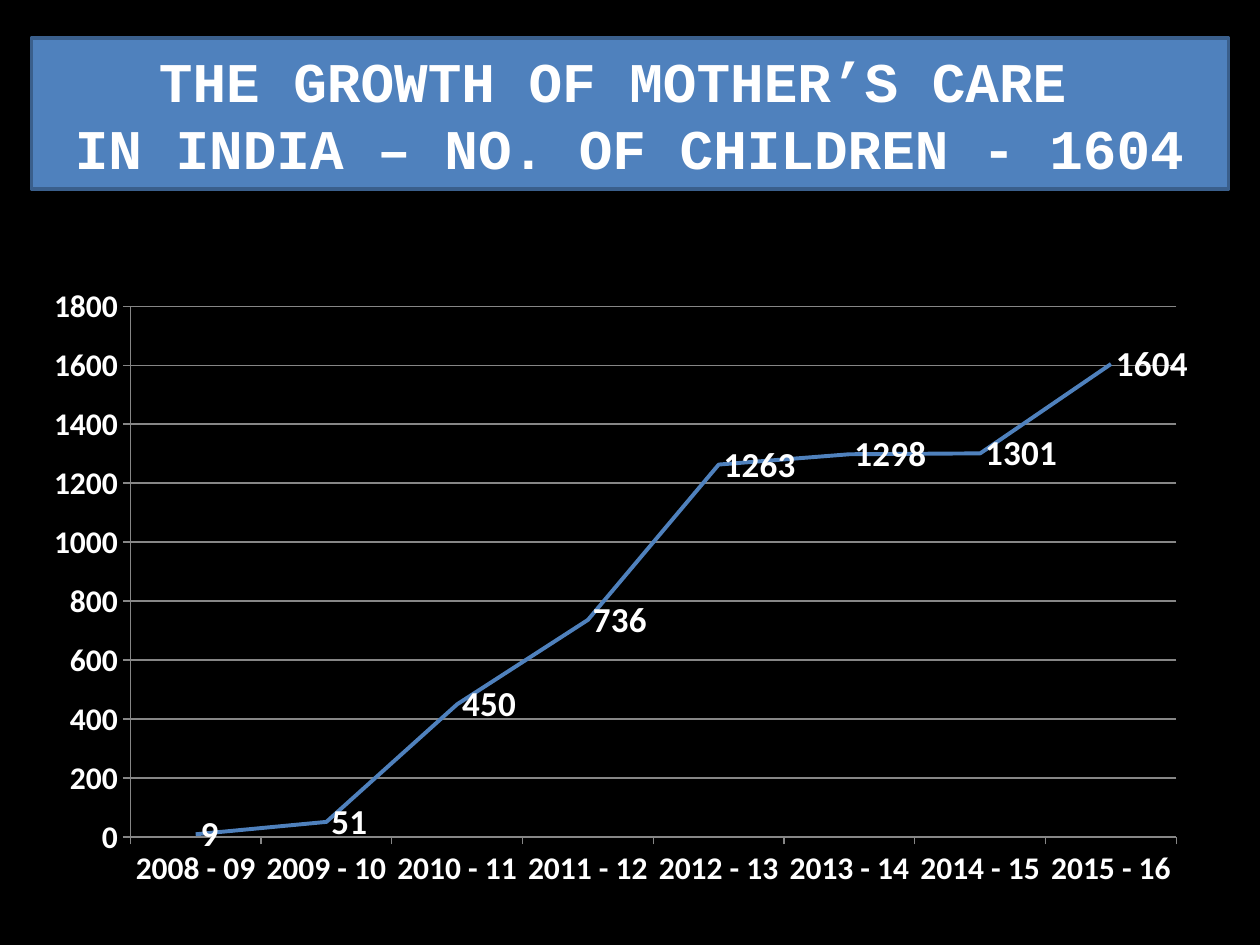
from lxml import etree
from pptx import Presentation
from pptx import util as u
from pptx.chart.data import CategoryChartData
from pptx.dml.color import RGBColor
from pptx.enum import chart as ch
from pptx.enum import text
from pptx.oxml import ns

BLACK, WHITE, BLUE, EDGE, GRID = "000000", "FFFFFF", "4F81BD", "3A5F8C", "868686"
CHILDREN = {
    "2008 - 09": 9, "2009 - 10": 51, "2010 - 11": 450, "2011 - 12": 736,
    "2012 - 13": 1263, "2013 - 14": 1298, "2014 - 15": 1301, "2015 - 16": 1604,
}


def color(value):
    return RGBColor.from_string(value)


def fill_solid(fill, value):
    fill.solid()
    fill.fore_color.rgb = color(value)


def set_line(line, value, width):
    fill_solid(line.fill, value)
    line.width = u.Pt(width)


def set_font(font, name, size, value):
    font.name, font.size, font.bold = name, u.Pt(size), True
    font.color.rgb = color(value)


def place_title(title, box):
    title.left, title.top, title.width, title.height = map(u.Inches, box)
    fill_solid(title.fill, BLUE)
    set_line(title.line, EDGE, 2)
    frame = title.text_frame
    frame.word_wrap = True
    frame.auto_size = text.MSO_AUTO_SIZE.NONE
    frame.vertical_anchor = text.MSO_ANCHOR.MIDDLE
    frame.text = "THE GROWTH OF MOTHER’S CARE \vIN INDIA – NO. OF CHILDREN - 1604"
    paragraph = frame.paragraphs[0]
    paragraph.alignment = text.PP_ALIGN.CENTER
    set_font(paragraph.font, "Courier New", 32, WHITE)


def set_plot_layout(chart, box):
    """Fix the inner plot area, given as fractions of the chart."""
    plot_area = chart.plots[0]._element.getparent()
    for old in plot_area.findall(ns.qn("c:layout")):
        plot_area.remove(old)
    layout = etree.Element(ns.qn("c:layout"))
    manual = etree.SubElement(layout, ns.qn("c:manualLayout"))
    settings = [("layoutTarget", "inner"), ("xMode", "edge"), ("yMode", "edge")]
    settings += zip("xywh", box)
    for tag, value in settings:
        etree.SubElement(manual, ns.qn(f"c:{tag}")).set("val", str(value))
    plot_area.insert(0, layout)


def style_axis(axis):
    axis.major_tick_mark = ch.XL_TICK_MARK.OUTSIDE
    axis.minor_tick_mark = ch.XL_TICK_MARK.NONE
    set_line(axis.format.line, GRID, 0.75)
    set_font(axis.tick_labels.font, "Calibri", 18, WHITE)


def add_growth_chart(slide, box):
    data = CategoryChartData()
    data.categories = list(CHILDREN)
    data.add_series("Series 1", list(CHILDREN.values()))
    chart = slide.shapes.add_chart(
        ch.XL_CHART_TYPE.LINE, *map(u.Inches, box), data).chart
    chart.has_legend = False
    chart.has_title = False
    chart.font.name, chart.font.size = "Calibri", u.Pt(18)
    set_plot_layout(chart, (0.084, 0.122, 0.89, 0.755))

    # Axes and gridlines
    style_axis(chart.category_axis)
    values = chart.value_axis
    style_axis(values)
    values.minimum_scale, values.maximum_scale, values.major_unit = 0, 1800, 200
    values.has_major_gridlines = True
    set_line(values.major_gridlines.format.line, GRID, 0.75)

    # Line and its value labels
    plot = chart.plots[0]
    plot.vary_by_categories = False
    series = plot.series[0]
    series.smooth = False
    series.marker.style = ch.XL_MARKER_STYLE.NONE
    set_line(series.format.line, BLUE, 2.25)
    labels = series.data_labels
    labels.show_value = True
    labels.position = ch.XL_LABEL_POSITION.RIGHT
    set_font(labels.font, "Calibri", 20, WHITE)


def main():
    presentation = Presentation()
    presentation.slide_width, presentation.slide_height = u.Inches(10), u.Inches(7.5)
    slide = presentation.slides.add_slide(presentation.slide_layouts.get_by_name("Title Only"))
    fill_solid(slide.background.fill, BLACK)
    place_title(slide.shapes.title, (0.25, 0.3, 9.5, 1.2))
    add_growth_chart(slide, (0.25, 1.75, 9.33, 5.58))
    presentation.save("out.pptx")


if __name__ == "__main__":
    main()
